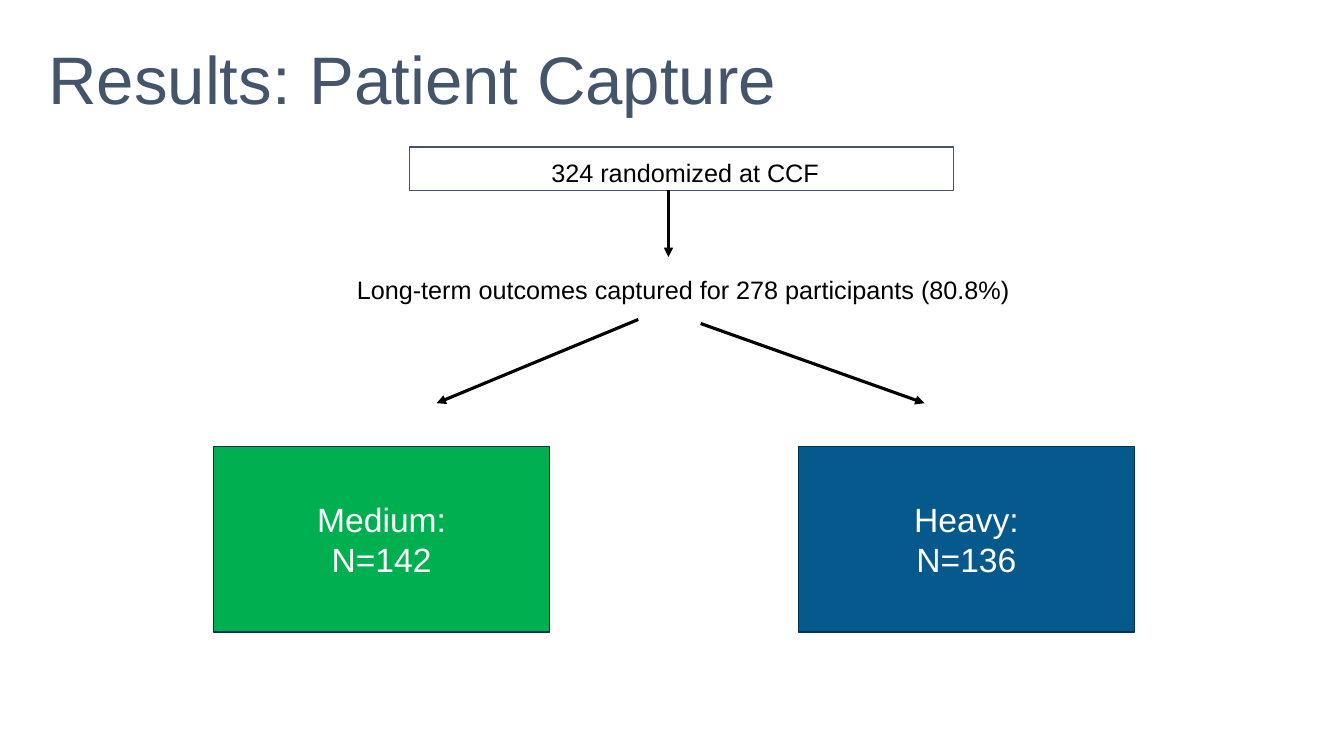
from lxml import etree
from pptx import Presentation
from pptx import util as u
from pptx.dml.color import RGBColor
from pptx.enum import shapes, text
from pptx.oxml import ns

BLACK = RGBColor(0x00, 0x00, 0x00)
WHITE = RGBColor(0xFF, 0xFF, 0xFF)
SLATE = RGBColor(0x44, 0x54, 0x6A)
NAVY = RGBColor(0x04, 0x34, 0x52)
GREEN = RGBColor(0x00, 0xB0, 0x50)
BLUE = RGBColor(0x06, 0x59, 0x8D)


class FlowSlide:
    """Draws the parts of a patient flow chart on one slide."""

    font = "Arial"
    arrow_width = u.Pt(2.25)

    def __init__(self, slide):
        self.slide = slide

    def set_words(self, frame, words, size, color, align, anchor):
        frame.word_wrap = True
        frame.vertical_anchor = anchor
        frame.text = words
        for paragraph in frame.paragraphs:
            paragraph.alignment = align
            for run in paragraph.runs:
                run.font.name = self.font
                run.font.size = u.Pt(size)
                run.font.color.rgb = color

    def label(self, place, words, size=18, color=BLACK, anchor=text.MSO_ANCHOR.TOP):
        box = self.slide.shapes.add_textbox(*map(u.Inches, place))
        self.set_words(box.text_frame, words, size, color, text.PP_ALIGN.LEFT, anchor)
        return box

    def box(self, place, border, fill=None, words=""):
        box = self.slide.shapes.add_shape(
            shapes.MSO_SHAPE.RECTANGLE, *map(u.Inches, place))
        box.shadow.inherit = False
        box.line.color.rgb = border
        box.line.width = u.Pt(1)
        if fill is None:
            box.fill.background()
        else:
            box.fill.solid()
            box.fill.fore_color.rgb = fill
        if words:
            self.set_words(box.text_frame, words, 24, WHITE,
                           text.PP_ALIGN.CENTER, text.MSO_ANCHOR.MIDDLE)

    def arrow(self, start, end):
        arrow = self.slide.shapes.add_connector(
            shapes.MSO_CONNECTOR.STRAIGHT, *map(u.Inches, start + end))
        arrow.line.color.rgb = BLACK
        arrow.line.width = self.arrow_width
        properties = arrow._element.spPr
        outline = properties.find(ns.qn("a:ln"))
        etree.SubElement(outline, ns.qn("a:tailEnd"), type="triangle")
        etree.SubElement(properties, ns.qn("a:effectLst"))


def main():
    deck = Presentation()
    deck.slide_width, deck.slide_height = u.Inches(13.33), u.Inches(7.5)
    flow = FlowSlide(deck.slides.add_slide(deck.slide_layouts[6]))

    title = flow.label((0.38, 0.1, 12.9, 1.45), "Results: Patient Capture",
                       48, SLATE, text.MSO_ANCHOR.MIDDLE)
    title.text_frame.paragraphs[0].line_spacing = 0.9

    flow.box((4.06, 1.46, 5.4, 0.43), SLATE)
    flow.label((5.37, 1.51, 3, 0.4), "324 randomized at CCF")
    flow.label((3.44, 2.67, 6.92, 0.4),
               "Long-term outcomes captured for 278 participants (80.8%)")

    for left, fill, arm in ((2.12, GREEN, "Medium:\nN=142"),
                            (7.92, BLUE, "Heavy:\nN=136")):
        flow.box((left, 4.43, 3.33, 1.84), NAVY, fill, arm)

    for start, end in (((6.63, 1.89), (6.63, 2.55)),
                       ((6.33, 3.17), (4.33, 4)),
                       ((6.95, 3.21), (9.17, 4))):
        flow.arrow(start, end)

    deck.save("out.pptx")


if __name__ == "__main__":
    main()
